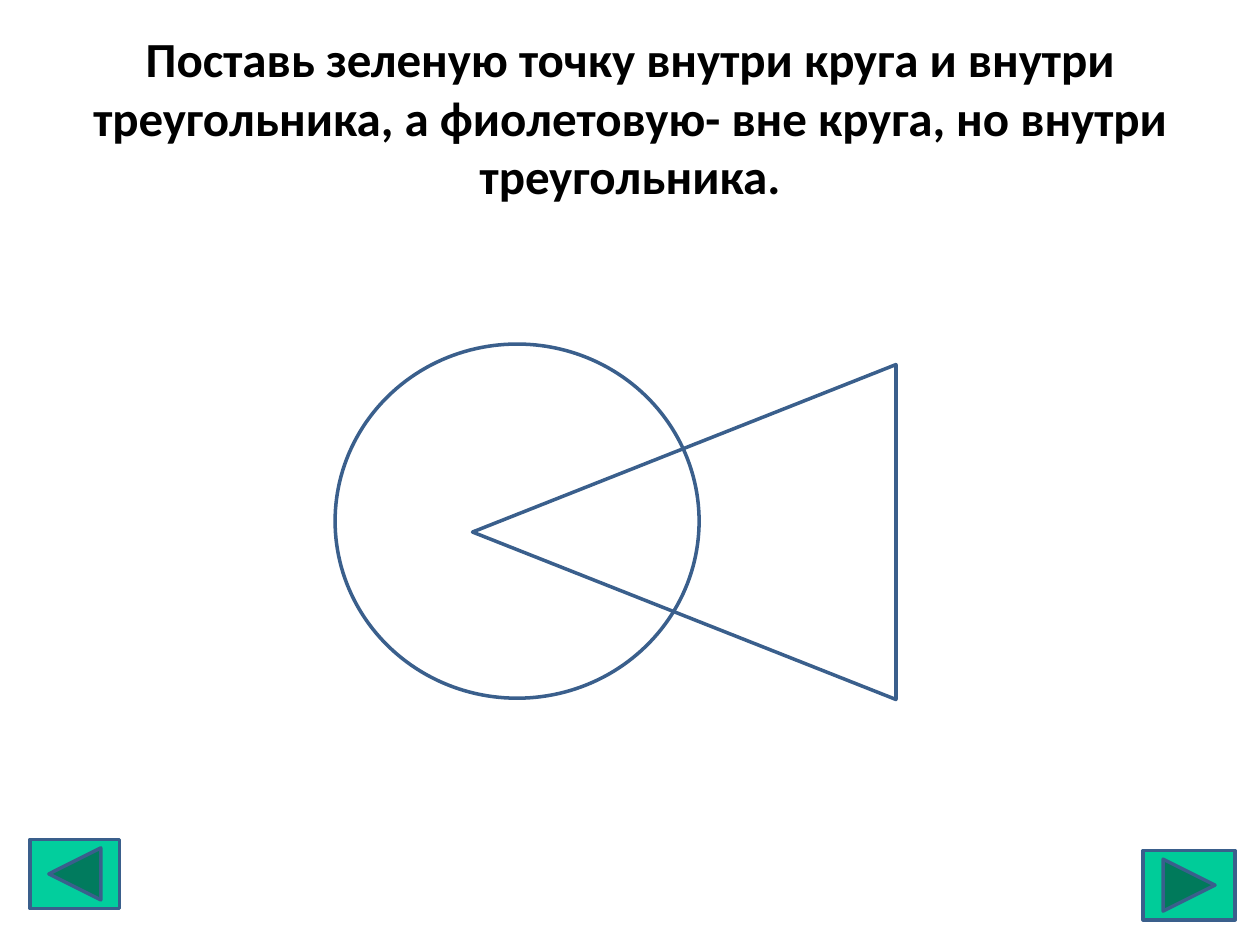
import pptx
import pptx.util
import pptx.dml.color
import pptx.enum.shapes
import pptx.enum.text

Pt = pptx.util.Pt
Kind = pptx.enum.shapes.MSO_SHAPE

# Colours and type
THEME = {
    "font": "Calibri",
    "size": 28,
    "text": "000000",
    "paper": "FFFFFF",
    "line": "3A5F8C",
    "width": 2,
    "next": "00CC99",
    "back": "02CE9D",
}


def color(name):
    return pptx.dml.color.RGBColor.from_string(THEME[name])


def apply(item, values):
    for name, value in values.items():
        setattr(item, name, value)


def box(left, top, width, height):
    return dict(left=Pt(left), top=Pt(top), width=Pt(width), height=Pt(height))


def add_title(slide, text, place):
    title = slide.shapes.title
    apply(title, place)
    frame = title.text_frame
    frame.text = text
    apply(frame, {
        "word_wrap": True,
        "auto_size": pptx.enum.text.MSO_AUTO_SIZE.NONE,
        "vertical_anchor": pptx.enum.text.MSO_ANCHOR.MIDDLE,
    })
    para = frame.paragraphs[0]
    para.alignment = pptx.enum.text.PP_ALIGN.CENTER
    font = para.runs[0].font
    apply(font, {"name": THEME["font"], "size": Pt(THEME["size"]), "bold": True})
    font.color.rgb = color("text")


def add_figure(slide, kind, place, fill=None, turn=0):
    shape = slide.shapes.add_shape(kind, **place)
    shape.rotation = turn
    shape.shadow.inherit = False
    if fill:
        shape.fill.solid()
        shape.fill.fore_color.rgb = color(fill)
    else:
        shape.fill.background()
    shape.line.color.rgb = color("line")
    shape.line.width = Pt(THEME["width"])


def main():
    deck = pptx.Presentation()
    apply(deck, {"slide_width": Pt(720), "slide_height": Pt(540)})
    slide = deck.slides.add_slide(deck.slide_layouts[5])

    # Task
    add_title(
        slide,
        "Поставь зеленую точку внутри круга и внутри треугольника, "
        "а фиолетовую- вне круга, но внутри треугольника.",
        box(36, 21.6, 648, 90),
    )

    # Circle and the triangle that overlaps it
    add_figure(slide, Kind.OVAL, box(191.5, 196.6, 208, 202.4), "paper")
    add_figure(slide, Kind.ISOSCELES_TRIANGLE, box(295.3, 183, 191.4, 242), turn=270)

    # Page buttons
    add_figure(slide, Kind.ACTION_BUTTON_FORWARD_OR_NEXT,
               box(653.2, 486, 52.6, 39.6), "next")
    add_figure(slide, Kind.ACTION_BUTTON_BACK_OR_PREVIOUS,
               box(17.2, 479.6, 51.2, 39.6), "back")

    deck.save("out.pptx")


if __name__ == "__main__":
    main()
